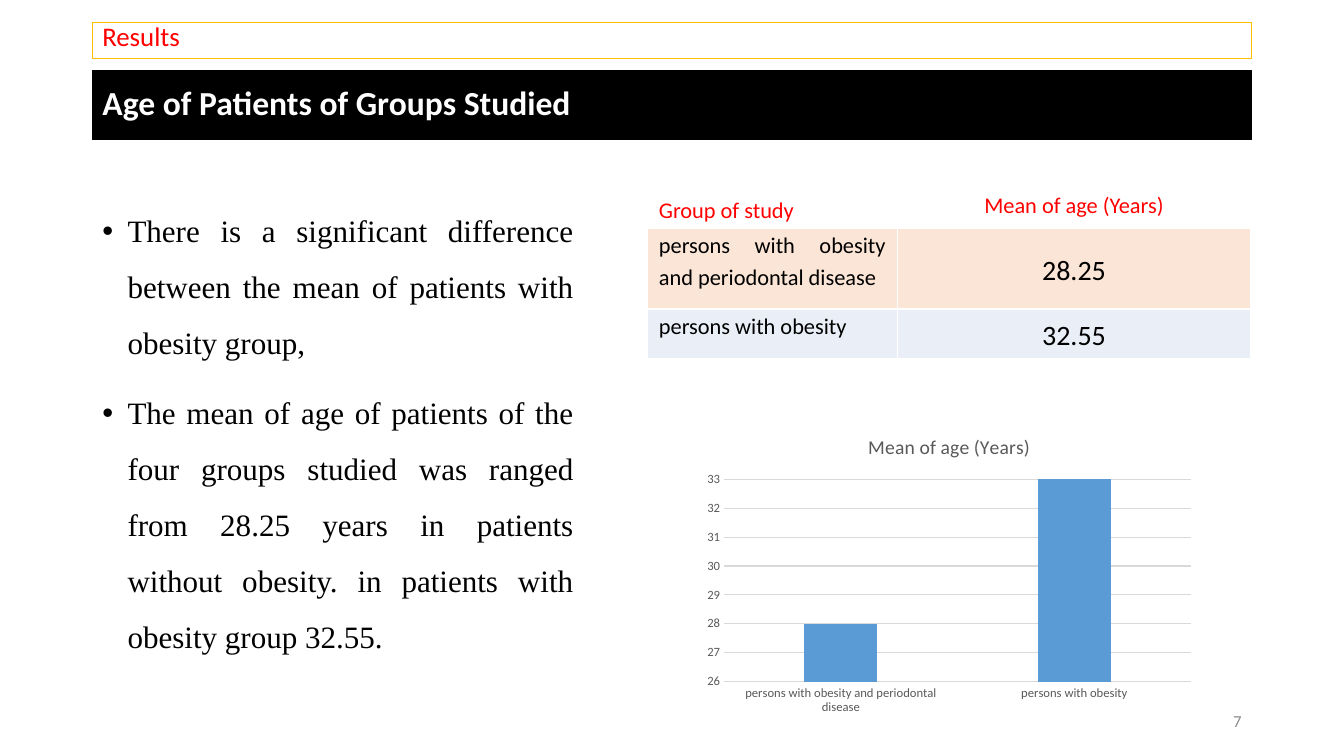
from pptx import Presentation
from pptx import util as u
from pptx.chart.data import CategoryChartData
from pptx.dml.color import RGBColor
from pptx.enum import chart as charts, shapes, text
from pptx.oxml import parse_xml
from pptx.oxml.ns import nsdecls

BLACK = RGBColor(0, 0, 0)
WHITE = RGBColor(255, 255, 255)
RED = RGBColor(255, 0, 0)
GOLD = RGBColor(0xFF, 0xC0, 0x00)
PEACH = RGBColor(0xFB, 0xE5, 0xD6)
PALE_BLUE = RGBColor(0xEA, 0xEF, 0xF7)
BAR_BLUE = RGBColor(0x5B, 0x9B, 0xD5)
LABEL_GREY = RGBColor(0x59, 0x59, 0x59)
GRID_GREY = RGBColor(0xD9, 0xD9, 0xD9)
NUMBER_GREY = RGBColor(0x8C, 0x8C, 0x8C)

LEFT, CENTER = text.PP_ALIGN.LEFT, text.PP_ALIGN.CENTER
RIGHT, JUSTIFY = text.PP_ALIGN.RIGHT, text.PP_ALIGN.JUSTIFY
TOP, MIDDLE = text.MSO_ANCHOR.TOP, text.MSO_ANCHOR.MIDDLE

MEASURE = "Mean of age (Years)"
GROUPS = [
    ("persons with obesity and periodontal disease", 28.25, PEACH),
    ("persons with obesity", 32.55, PALE_BLUE),
]
FINDINGS = [
    "There is a significant difference between the mean of patients with obesity group, ",
    "The mean of age of patients of the four groups studied was ranged from 28.25 years "
    "in patients without obesity. in patients with obesity group 32.55.",
]


def set_font(font, size, color, name="Calibri", bold=False):
    font.size = u.Pt(size)
    font.color.rgb = color
    font.name = name
    font.bold = bold


def write(frame, *lines, size, color=BLACK, name="Calibri", bold=False, align=LEFT,
          spacing=1.0, before=0, anchor=TOP, indent=0, right_indent=0, bullet=False):
    frame.word_wrap = True
    frame.auto_size = text.MSO_AUTO_SIZE.NONE
    frame.vertical_anchor = anchor
    for index, line in enumerate(lines):
        para = frame.add_paragraph() if index else frame.paragraphs[0]
        para.alignment = align
        para.line_spacing = spacing
        para.space_before = u.Pt(before)
        span = para.add_run()
        span.text = line
        set_font(span.font, size, color, name, bold)
        format_indent(para, indent, right_indent, bullet)


def format_indent(para, indent, right_indent, bullet):
    properties = para._p.get_or_add_pPr()
    properties.set("marL", str(u.Pt(indent)))
    properties.set("marR", str(u.Pt(right_indent)))
    properties.set("indent", str(u.Pt(-indent if bullet else 0)))
    if bullet:
        properties.append(parse_xml(f'<a:buFont {nsdecls("a")} typeface="Arial"/>'))
        properties.append(parse_xml(f'<a:buChar {nsdecls("a")} char="•"/>'))


def add_section_label(page, left, top, width, height):
    box = page.shapes.add_shape(shapes.MSO_SHAPE.RECTANGLE,
                                u.Pt(left), u.Pt(top), u.Pt(width), u.Pt(height))
    box.shadow.inherit = False
    box.fill.background()
    box.line.color.rgb = GOLD
    box.line.width = u.Pt(0.5)
    write(box.text_frame, "Results", size=19.2, color=RED, spacing=0.7, anchor=MIDDLE)


def add_title(page, left, top, width, height):
    title = page.shapes.title
    title.left, title.top = u.Pt(left), u.Pt(top)
    title.width, title.height = u.Pt(width), u.Pt(height)
    title.fill.solid()
    title.fill.fore_color.rgb = BLACK
    title.line.color.rgb = BLACK
    title.line.width = u.Pt(1)
    write(title.text_frame, "Age of Patients of Groups Studied", size=24, color=WHITE,
          bold=True, spacing=0.9, anchor=MIDDLE)


def add_findings(page, left, top, width, height):
    box = page.shapes.add_textbox(u.Pt(left), u.Pt(top), u.Pt(width), u.Pt(height))
    write(box.text_frame, *FINDINGS, size=22.2, name="Times New Roman", align=JUSTIFY,
          spacing=1.5, before=10, indent=18, bullet=True)


def add_borders(cell):
    properties = cell._tc.get_or_add_tcPr()
    for position, side in enumerate(("lnL", "lnR", "lnT", "lnB")):
        properties.insert(position, parse_xml(
            f'<a:{side} {nsdecls("a")} w="{u.Pt(1)}"><a:solidFill>'
            f'<a:srgbClr val="{WHITE}"/></a:solidFill></a:{side}>'))


def fill_cell(cell, words, fill=None, **style):
    cell.margin_left = cell.margin_right = u.Pt(5.2)
    cell.margin_top = cell.margin_bottom = 0
    if fill is None:
        cell.fill.background()
    else:
        cell.fill.solid()
        cell.fill.fore_color.rgb = fill
    write(cell.text_frame, words, spacing=1.15, indent=3, right_indent=3, **style)
    cell.vertical_anchor = style.get("anchor", TOP)
    add_borders(cell)


def add_age_table(page, left, top, width, height):
    table = page.shapes.add_table(len(GROUPS) + 1, 2, u.Pt(left), u.Pt(top),
                                  u.Pt(width), u.Pt(height)).table
    table.horz_banding = table.first_row = False
    for column, share in zip(table.columns, (0.414, 0.586)):
        column.width = u.Pt(round(width * share, 1))
    for row, share in zip(table.rows, (0.235, 0.475, 0.29)):
        row.height = u.Pt(round(height * share, 1))
    fill_cell(table.cell(0, 0), "Group of study", size=16, color=RED, anchor=MIDDLE)
    fill_cell(table.cell(0, 1), MEASURE, size=16, color=RED, align=CENTER)
    for row, (group, age, fill) in enumerate(GROUPS, 1):
        fill_cell(table.cell(row, 0), group, fill, size=16, align=JUSTIFY)
        fill_cell(table.cell(row, 1), str(age), fill, size=20, align=CENTER, anchor=MIDDLE)


def add_age_chart(page, left, top, width, height):
    data = CategoryChartData()
    data.categories = [group for group, age, fill in GROUPS]
    data.add_series(MEASURE, [round(age) for group, age, fill in GROUPS])
    chart = page.shapes.add_chart(charts.XL_CHART_TYPE.COLUMN_CLUSTERED, u.Pt(left),
                                  u.Pt(top), u.Pt(width), u.Pt(height), data).chart
    set_font(chart.font, 10, BLACK)
    chart.has_legend = False
    chart.has_title = True
    chart.chart_title.include_in_layout = False
    heading = chart.chart_title.text_frame.paragraphs[0].add_run()
    heading.text = MEASURE
    set_font(heading.font, 14, LABEL_GREY)
    plot = chart.plots[0]
    plot.vary_by_categories = False
    plot.gap_width = 219
    plot.overlap = -27
    bars = plot.series[0].format.fill
    bars.solid()
    bars.fore_color.rgb = BAR_BLUE
    for axis in (chart.category_axis, chart.value_axis):
        axis.major_tick_mark = axis.minor_tick_mark = charts.XL_TICK_MARK.NONE
        set_font(axis.tick_labels.font, 9, LABEL_GREY)
    values = chart.value_axis
    values.minimum_scale, values.maximum_scale, values.major_unit = 26, 33, 1
    values.tick_labels.number_format = "General"
    values.tick_labels.number_format_is_linked = False
    values.format.line.fill.background()
    for line in (values.major_gridlines.format.line, chart.category_axis.format.line):
        line.color.rgb = GRID_GREY
        line.width = u.Pt(0.75)


def add_page_number(page, left, top, width, height):
    box = page.shapes.add_textbox(u.Pt(left), u.Pt(top), u.Pt(width), u.Pt(height))
    write(box.text_frame, "7", size=12, color=NUMBER_GREY, align=RIGHT, anchor=MIDDLE)


def main():
    deck = Presentation()
    deck.slide_width, deck.slide_height = u.Pt(960), u.Pt(540)
    page = deck.slides.add_slide(deck.slide_layouts.get_by_name("Title Only"))
    add_title(page, 66, 50.5, 828, 49)
    add_findings(page, 66, 134.5, 351, 355)
    add_page_number(page, 678, 500.5, 216, 29)
    add_age_table(page, 462.5, 134.5, 431, 121.5)
    add_section_label(page, 66, 16, 828, 25.5)
    add_age_chart(page, 498, 299, 360, 216)
    deck.save("out.pptx")


if __name__ == "__main__":
    main()
